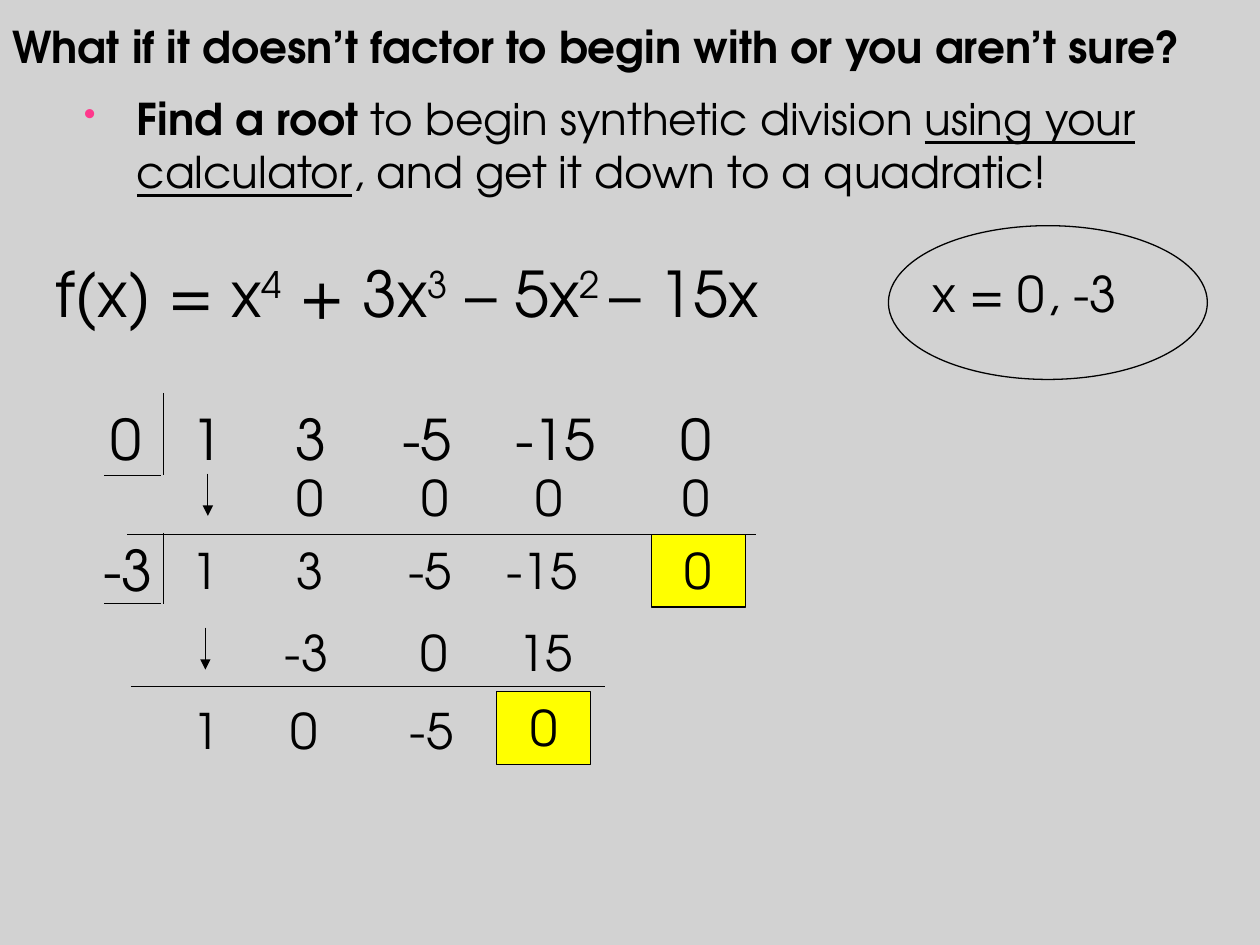
from lxml import etree
from pptx import Presentation
from pptx import util as u
from pptx.dml.color import RGBColor
from pptx.enum import shapes, text
from pptx.oxml import ns

COLORS = {"background": "D2D2D2", "ink": "000000", "remainder": "FFFF00", "bullet": "FF388C"}
FONT = "TeX Gyre Adventor"
LEFT, CENTER = text.PP_ALIGN.LEFT, text.PP_ALIGN.CENTER

presentation = Presentation()
presentation.slide_width, presentation.slide_height = u.Cm(25.4), u.Cm(19.05)
slide = presentation.slides.add_slide(presentation.slide_layouts[6])
slide.background.fill.solid()
slide.background.fill.fore_color.rgb = RGBColor.from_string(COLORS["background"])


def write(shape, runs, size, align=LEFT):
    shape.text_frame.word_wrap = True
    shape.text_frame.vertical_anchor = text.MSO_ANCHOR.TOP
    paragraph = shape.text_frame.paragraphs[0]
    paragraph.alignment = align
    paragraph.font.name = FONT
    paragraph.font.size = u.Pt(size)
    paragraph.font.color.rgb = RGBColor.from_string(COLORS["ink"])
    for words in runs:
        paragraph.add_run().text = words
    return paragraph


def add_line(x1, y1, x2, y2, arrow=False):
    line = slide.shapes.add_connector(
        shapes.MSO_CONNECTOR.STRAIGHT, u.Cm(x1), u.Cm(y1), u.Cm(x2), u.Cm(y2))
    line.line.width = u.Pt(0.75)
    line.line.color.rgb = RGBColor.from_string(COLORS["ink"])
    if arrow:
        etree.SubElement(line.line._get_or_add_ln(), ns.qn("a:tailEnd"), type="triangle")
    etree.SubElement(line._element.spPr, ns.qn("a:effectLst"))


title = slide.shapes.add_textbox(0, u.Cm(0.28), u.Cm(25.4), u.Cm(1.32))
write(title, ["What if it doesn’t factor to begin with or you aren’t sure?"], 25).font.bold = True

advice = slide.shapes.add_textbox(u.Cm(1.27), u.Cm(1.73), u.Cm(22.86), u.Cm(2.74))
advice.text_frame.word_wrap = True
properties = advice.text_frame.paragraphs[0]._p.get_or_add_pPr()
properties.set("marL", str(u.Cm(1.24)))
properties.set("indent", str(u.Cm(-1.07)))
bullet_color = etree.SubElement(properties, ns.qn("a:buClr"))
etree.SubElement(bullet_color, ns.qn("a:srgbClr"), val=COLORS["bullet"])
etree.SubElement(properties, ns.qn("a:buSzPct"), val="80000")
etree.SubElement(properties, ns.qn("a:buChar"), char="•")
paragraph = write(advice, ["Find a root", " to begin synthetic division ", "using your calculator",
                           ", and get it down to a quadratic!"], 25)
paragraph.runs[0].font.bold = True
paragraph.runs[2].font.underline = True

function = slide.shapes.add_textbox(u.Cm(0.86), u.Cm(5), u.Cm(15.19), u.Cm(1.78))
paragraph = write(function, ["f(x) = x", "4", " + 3x", "3", " – 5x", "2 ", "– 15x"], 36)
for exponent in paragraph.runs[1::2]:
    exponent._r.get_or_add_rPr().set("baseline", "30000")

ellipse = slide.shapes.add_shape(
    shapes.MSO_SHAPE.OVAL, u.Cm(17.91), u.Cm(4.55), u.Cm(6.43), u.Cm(3.1))
ellipse.shadow.inherit = False
ellipse.fill.background()
ellipse.line.width = u.Pt(0.75)
ellipse.line.color.rgb = RGBColor.from_string(COLORS["ink"])

text_rows = [
    (5.18, 28, [("x = 0", 18.54, 3.23, LEFT), (", -3", 20.85, 1.96, LEFT)]),
    (8.03, 32, [("0", 1.6, 1.9, CENTER), ("1", 3.23, 1.9, CENTER), ("3", 5.33, 1.9, CENTER),
                ("-5", 7.49, 2.24, CENTER), ("-15", 10.08, 2.24, CENTER),
                ("0", 12.55, 2.95, CENTER)]),
    (9.3, 28, [("0", 5.72, 1.47, LEFT), ("0", 7.82, 1.9, CENTER),
               ("0", 9.98, 2.18, CENTER), ("0", 12.98, 2.11, CENTER)]),
    (10.67, 32, [("-3", 1.63, 1.9, CENTER)]),
    (10.77, 28, [("1", 3.61, 1.27, LEFT), ("3", 5.72, 2.11, LEFT),
                 ("-5", 7.82, 1.7, CENTER), ("-15", 9.86, 2.13, CENTER)]),
    (12.42, 28, [("-3", 5.05, 2.26, CENTER), ("0", 7.8, 1.9, CENTER),
                 ("15", 9.91, 2.18, CENTER)]),
    (14, 28, [("1", 3.63, 1.27, LEFT), ("0", 5.61, 2.11, LEFT), ("-5", 7.85, 1.7, CENTER)]),
]
for top, size, cells in text_rows:
    for value, left, width, align in cells:
        cell = slide.shapes.add_textbox(u.Cm(left), u.Cm(top), u.Cm(width), u.Cm(size / 20))
        write(cell, [value], size, align)

for left, top in [(13.13, 10.77), (10.01, 13.94)]:
    remainder = slide.shapes.add_shape(
        shapes.MSO_SHAPE.RECTANGLE, u.Cm(left), u.Cm(top), u.Cm(1.9), u.Cm(1.47))
    remainder.shadow.inherit = False
    remainder.fill.solid()
    remainder.fill.fore_color.rgb = RGBColor.from_string(COLORS["remainder"])
    remainder.line.width = u.Pt(0.75)
    remainder.line.color.rgb = RGBColor.from_string(COLORS["ink"])
    write(remainder, ["0"], 28, CENTER)

for top, bottom in [(7.92, 9.58), (10.74, 12.17)]:
    add_line(3.3, top, 3.3, bottom)
    add_line(3.24, bottom, 2.1, bottom)
for left, right, y in [(2.57, 15.24, 10.77), (2.64, 12.19, 13.84)]:
    add_line(left, y, right, y)
for x, top in [(4.19, 9.55), (4.14, 12.65)]:
    add_line(x, top, x, top + 0.85, arrow=True)

presentation.save("out.pptx")
